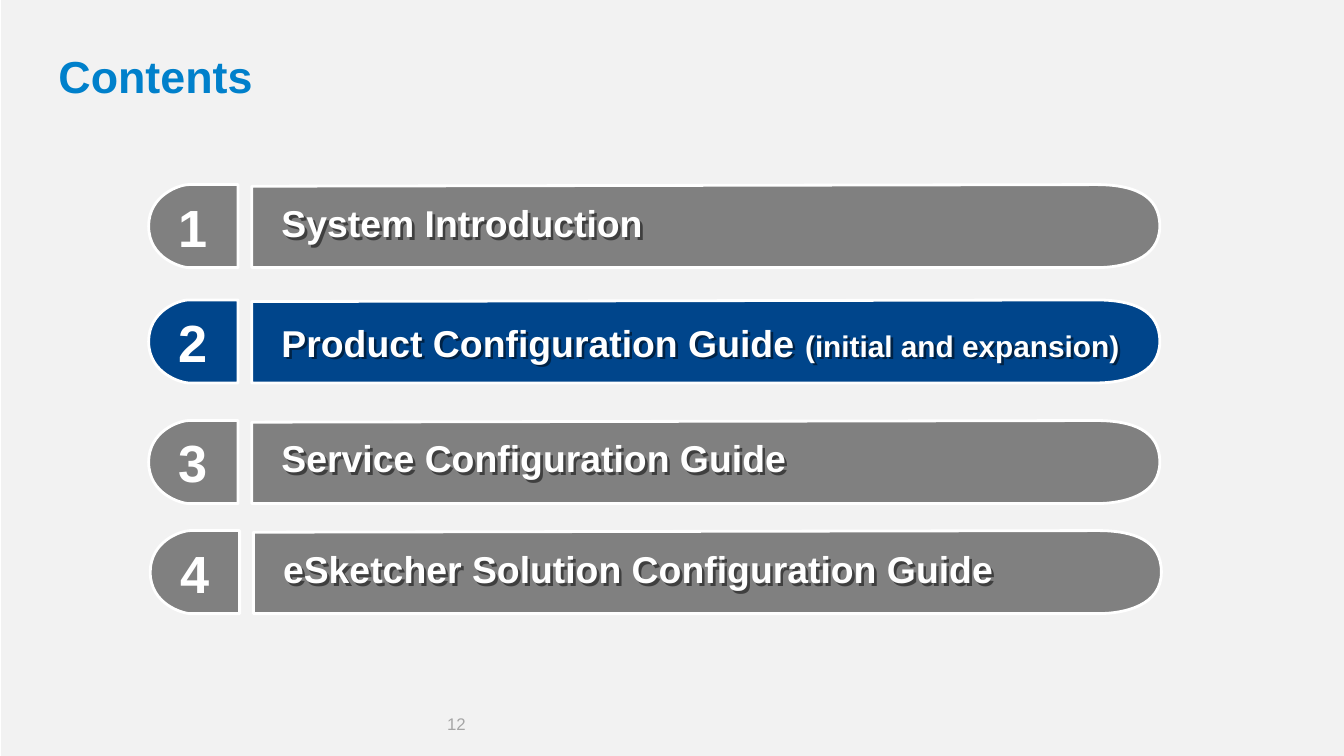
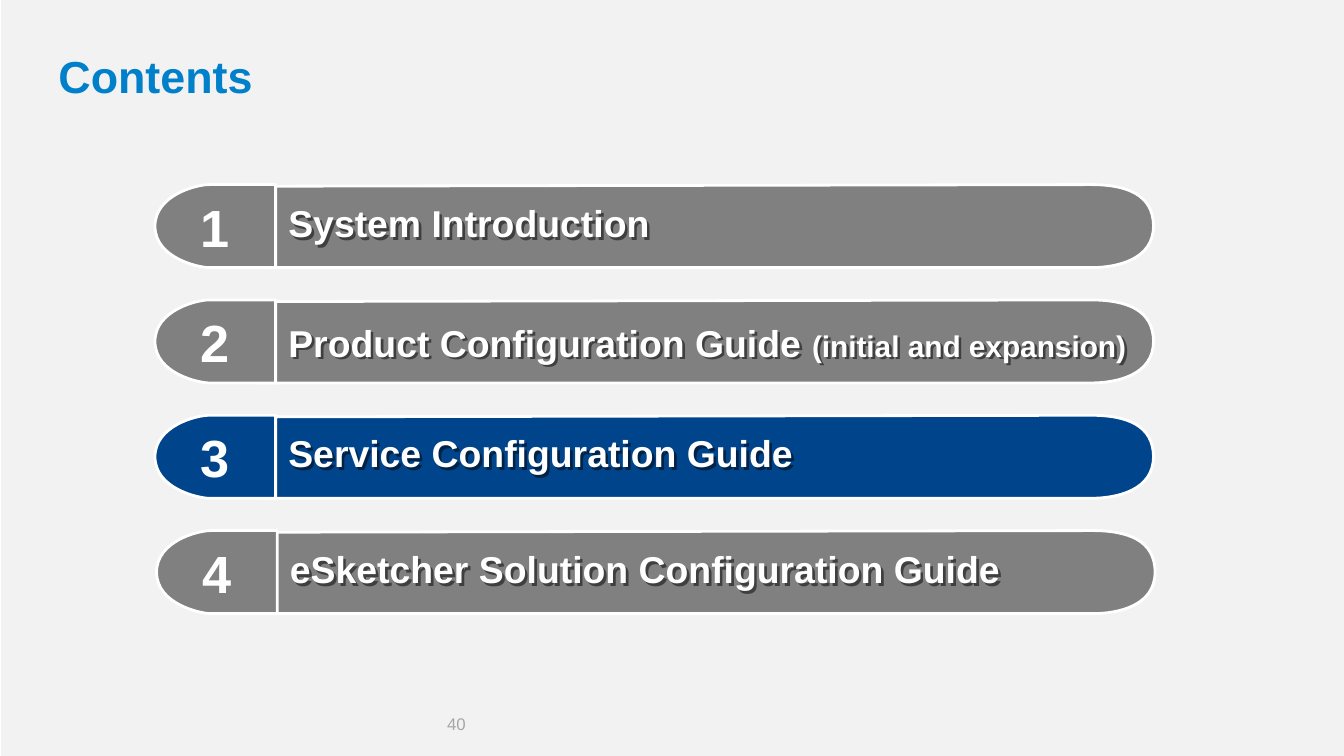
from lxml import etree
from pptx import Presentation
from pptx.dml.color import RGBColor
from pptx.enum.shapes import MSO_SHAPE
from pptx.enum.text import MSO_ANCHOR, MSO_AUTO_SIZE, PP_ALIGN
from pptx.oxml import parse_xml
from pptx.oxml.ns import nsdecls, qn
from pptx.util import Cm, Pt

RECTANGLE = MSO_SHAPE.RECTANGLE
MIDDLE, TOP = MSO_ANCHOR.MIDDLE, MSO_ANCHOR.TOP
CENTER, LEFT = PP_ALIGN.CENTER, PP_ALIGN.LEFT
GROW = MSO_AUTO_SIZE.SHAPE_TO_FIT_TEXT

FONT = "Arial"
PAPER, TITLE_BLUE, PAGE_GREY = "F2F2F2", "0080CB", "A6A6A6"
IDLE, ACTIVE, WHITE = "808080", "00458B", "FFFFFF"
TITLE_ONLY = 5
SLIDE_WIDTH, SLIDE_HEIGHT = 25.4, 14.29

# Chapter label runs (text, size), label drop and label width (None: past the bar), in cm
CHAPTERS = [
    ([("System Introduction", 20)], 0.17, 13.5),
    ([("Product Configuration Guide ", 20), ("(initial and expansion)", 16)], 0.25, None),
    ([("Service Configuration Guide", 20)], 0.16, None),
    ([("eSketcher Solution Configuration Guide", 20)], 0.17, None),
]
FIRST_ROW, ROW_STEP, ROW_HEIGHT = 3.49, 2.18, 1.57
LABEL_INDENT, LABEL_HEIGHT = 0.31, 1.12
LAST_ROW_SHIFT = 0.03

# Outlines as fractions of their box: two numbers make a corner, six a Bezier curve
TAB_OUTLINE = [(1, 0), (1, 1), (0.45, 1),
               (0.37, 1, 0, 0.89, 0, 0.5),
               (0, 0.13, 0.34, 0, 0.45, 0)]
BAR_OUTLINE = [(0, 0.02), (0, 1), (0.93, 1),
               (0.96, 1, 1, 0.9, 1, 0.5),
               (1, 0.12, 0.97, 0, 0.93, 0)]


def rgb(hex_text):
    return RGBColor.from_string(hex_text)


def add_run(paragraph, text, size, colour, bold=True):
    run = paragraph.add_run()
    run.text = text
    run.font.name = FONT
    run.font.size = Pt(size)
    run.font.bold = bold
    run.font.color.rgb = rgb(colour)


def add_text_shadow(box):
    """Give an unfilled box a shadow, which falls from its letters."""
    box._element.spPr.append(parse_xml(
        f'<a:effectLst {nsdecls("a")}>'
        '<a:outerShdw dist="25400" dir="2700000" algn="ctr" rotWithShape="0">'
        '<a:srgbClr val="000000"><a:alpha val="50000"/></a:srgbClr>'
        '</a:outerShdw></a:effectLst>'))


def bend_curves(piece, outline):
    """Join the three line steps of each curve into one Bezier segment."""
    steps = iter(list(piece._element.iter(qn("a:lnTo"))))
    for part in outline[1:]:
        first = next(steps)
        if len(part) == 2:
            continue
        curve = etree.Element(qn("a:cubicBezTo"))
        first.addprevious(curve)
        for step in (first, next(steps), next(steps)):
            curve.append(step[0])
            step.getparent().remove(step)


def add_outline(shapes, outline, left, top, width, height, colour):
    points = [(Cm(left + x * width), Cm(top + y * height))
              for part in outline for x, y in zip(part[::2], part[1::2])]
    builder = shapes.build_freeform(*points[0])
    builder.add_line_segments(points[1:], close=True)
    piece = builder.convert_to_shape()
    bend_curves(piece, outline)
    piece.shadow.inherit = False
    piece.fill.solid()
    piece.fill.fore_color.rgb = rgb(colour)
    piece.line.color.rgb = rgb(WHITE)
    piece.line.width = Pt(1.5)
    return piece


def add_chapter(slide, number, chapter, columns, shift, top, colour):
    """Draw one row: title bar, number tab and label."""
    runs, drop, label_width = chapter
    tab_left, tab_width, bar_left, bar_width = columns
    row = slide.shapes.add_group_shape().shapes
    add_outline(row, BAR_OUTLINE, bar_left + shift, top, bar_width, ROW_HEIGHT, colour)

    tab = add_outline(row, TAB_OUTLINE, tab_left + shift, top, tab_width, ROW_HEIGHT, colour)
    frame = tab.text_frame
    frame.word_wrap = False
    frame.vertical_anchor = MIDDLE
    frame.paragraphs[0].alignment = CENTER
    add_run(frame.paragraphs[0], str(number), 28, WHITE)

    label = row.add_textbox(Cm(bar_left + shift + LABEL_INDENT), Cm(top + drop),
                            Cm(label_width or bar_width + LABEL_INDENT), Cm(LABEL_HEIGHT))
    add_text_shadow(label)
    label.text_frame.word_wrap = True
    label.text_frame.auto_size = GROW
    for text, size in runs:
        add_run(label.text_frame.paragraphs[0], text, size, WHITE)


def add_title(slide, text):
    title = slide.shapes.title
    title.left, title.top, title.width, title.height = Cm(0.85), Cm(0.66), Cm(23.7), Cm(1.52)
    title.text_frame.vertical_anchor = MIDDLE
    paragraph = title.text_frame.paragraphs[0]
    paragraph.alignment = LEFT
    add_run(paragraph, text, 24, TITLE_BLUE)


def add_page_number(slide, number):
    frame = slide.shapes.add_textbox(Cm(8.45), Cm(13.54), Cm(0.76), Cm(0.53)).text_frame
    frame.margin_left = frame.margin_top = frame.margin_right = frame.margin_bottom = 0
    frame.word_wrap = True
    frame.vertical_anchor = TOP
    frame.paragraphs[0].line_spacing = 0.85
    add_run(frame.paragraphs[0], str(number), 9, PAGE_GREY, bold=False)


def add_contents_slide(prs, page, active, columns, nudges):
    """Add a contents slide; nudges maps a chapter to its extra drop in cm."""
    slide = prs.slides.add_slide(prs.slide_layouts[TITLE_ONLY])
    add_page_number(slide, page)
    add_title(slide, "Contents")
    for number, chapter in enumerate(CHAPTERS, start=1):
        top = FIRST_ROW + (number - 1) * ROW_STEP + nudges.get(number, 0)
        shift = LAST_ROW_SHIFT if number == len(CHAPTERS) else 0
        colour = ACTIVE if number == active else IDLE
        add_chapter(slide, number, chapter, columns, shift, top, colour)
    return slide


def move_paper_to_master(prs, slide):
    """Draw the grey sheet once, behind everything on the master."""
    sheet = slide.shapes.add_shape(RECTANGLE, Cm(0.02), 0,
                                   Cm(SLIDE_WIDTH - 0.02), Cm(SLIDE_HEIGHT))
    sheet.shadow.inherit = False
    sheet.fill.solid()
    sheet.fill.fore_color.rgb = rgb(PAPER)
    sheet.line.fill.background()
    prs.slide_master.shapes._spTree.insert(2, sheet._element)


def main():
    prs = Presentation()
    prs.slide_width, prs.slide_height = Cm(SLIDE_WIDTH), Cm(SLIDE_HEIGHT)
    # columns: tab left, tab width, bar left, bar width
    first = add_contents_slide(prs, 12, 2, (2.81, 1.69, 4.76, 17.16), {3: 0.1})
    add_contents_slide(prs, 40, 3, (2.93, 2.28, 4.89, 16.91), {})
    move_paper_to_master(prs, first)
    prs.save("out.pptx")


if __name__ == "__main__":
    main()
